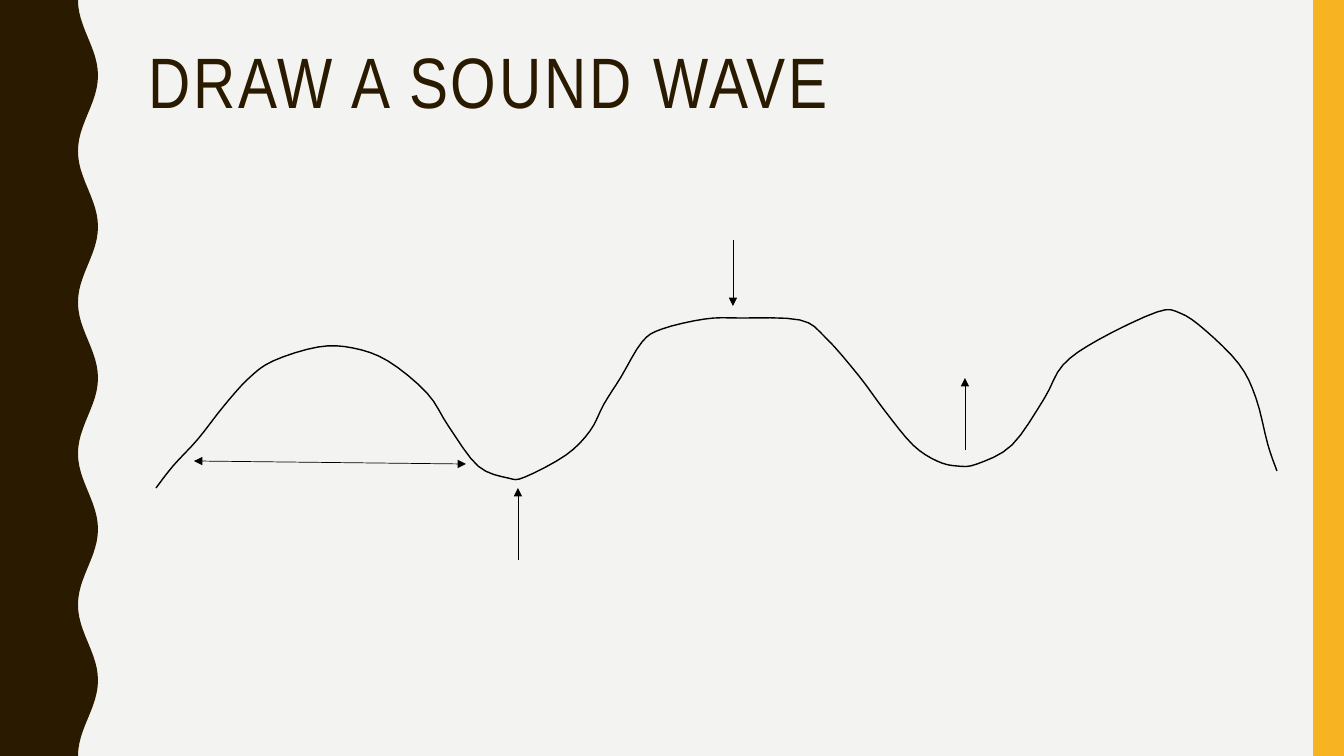
import math
import pptx
import pptx.util
import pptx.dml.color
import pptx.enum.shapes
import pptx.enum.text
import pptx.oxml
import pptx.oxml.ns

COLORS = {"background": "F3F3F2", "brown": "2A1A00", "gold": "F8B323", "ink": "000000"}
FONT = "Arial Narrow"
TITLE = "DRAW A SOUND WAVE"
TITLE_BOX = (138, 42, 1122, 164)
WIDTH, HEIGHT = 1344, 756
GOLD_BAR = (1313, 0, 31, HEIGHT)
RIPPLES, RIPPLE_STEPS = 5, 24
RIPPLE_MIDDLE, RIPPLE_DEPTH = 88, 10
SOUND_WAVE = [
    (156, 488), (173, 466), (198, 439), (223, 407), (248, 379), (273, 361),
    (318, 347), (353, 348), (388, 361), (427, 393), (449, 427), (478, 466),
    (508, 478), (525, 477), (566, 455), (590, 431), (604, 404), (621, 377),
    (642, 342), (662, 329), (705, 319), (740, 318), (800, 320), (826, 338),
    (859, 376), (885, 411), (913, 445), (937, 461), (957, 466), (977, 464),
    (1012, 445), (1044, 399), (1063, 365), (1098, 340), (1157, 312),
    (1180, 313), (1205, 330), (1239, 364), (1256, 398), (1268, 445), (1277, 471),
]
CURVE_STEPS = 4
ARROWS = [
    ((518, 560), (518, 488), ["tailEnd"]),
    ((965, 450), (965, 378), ["tailEnd"]),
    ((733, 240), (733, 306), ["tailEnd"]),
    ((194, 461), (466, 464), ["headEnd", "tailEnd"]),
]


def px(n):
    return pptx.util.Emu(round(n * 914400 / 100.8))


def color(name):
    return pptx.dml.color.RGBColor.from_string(COLORS[name])


def fill_plain(sp, name):
    sp.shadow.inherit = False
    sp.fill.solid()
    sp.fill.fore_color.rgb = color(name)
    sp.line.fill.background()


def outline(s, points, close):
    points = [(px(x), px(y)) for x, y in points]
    builder = s.shapes.build_freeform(*points[0], scale=1.0)
    builder.add_line_segments(points[1:], close=close)
    return builder.convert_to_shape()


def blend(a, b, c, d, t):
    return b + t / 2 * (c - a + t * (2 * a - 5 * b + 4 * c - d + t * (3 * (b - c) + d - a)))


def smooth_curve(points):
    ends = points[:1] + points + points[-1:]
    curve = []
    for group in zip(ends, ends[1:], ends[2:], ends[3:]):
        xs, ys = zip(*group)
        for i in range(CURVE_STEPS):
            t = i / CURVE_STEPS
            curve.append((blend(*xs, t), blend(*ys, t)))
    return curve + points[-1:]


def add_edge(s):
    steps = RIPPLES * RIPPLE_STEPS
    edge = [(RIPPLE_MIDDLE - RIPPLE_DEPTH * math.cos(math.tau * i / RIPPLE_STEPS),
             HEIGHT * i / steps) for i in range(steps + 1)]
    fill_plain(outline(s, [(0, 0)] + edge + [(0, HEIGHT)], True), "brown")


def add_wave(s):
    sp = outline(s, smooth_curve(SOUND_WAVE), False)
    sp.shadow.inherit = False
    sp.fill.background()
    sp.line.color.rgb = color("ink")
    sp.line.width = pptx.util.Pt(1)


def add_arrow(s, start, end, heads):
    line = s.shapes.add_connector(
        pptx.enum.shapes.MSO_CONNECTOR.STRAIGHT, *map(px, start + end))
    line.line.color.rgb = color("ink")
    line.line.width = pptx.util.Pt(0.5)
    spPr = line._element.spPr
    ln = spPr.find(pptx.oxml.ns.qn("a:ln"))
    for head in heads:
        ln.append(pptx.oxml.parse_xml(
            f'<a:{head} {pptx.oxml.ns.nsdecls("a")} type="triangle"/>'))
    spPr.append(pptx.oxml.parse_xml(
        f'<a:effectLst {pptx.oxml.ns.nsdecls("a")}/>'))


def set_title(s):
    sp = s.shapes.title
    sp.left, sp.top, sp.width, sp.height = map(px, TITLE_BOX)
    tf = sp.text_frame
    tf.word_wrap = True
    tf.auto_size = pptx.enum.text.MSO_AUTO_SIZE.NONE
    tf.vertical_anchor = pptx.enum.text.MSO_ANCHOR.TOP
    p = tf.paragraphs[0]
    p.alignment = pptx.enum.text.PP_ALIGN.LEFT
    p.line_spacing = 0.9
    r = p.add_run()
    r.text = TITLE
    r.font.name = FONT
    r.font.size = pptx.util.Pt(51)
    r.font.color.rgb = color("brown")
    r._r.get_or_add_rPr().set("spc", "200")


def main():
    prs = pptx.Presentation()
    prs.slide_width, prs.slide_height = px(WIDTH), px(HEIGHT)
    s = prs.slides.add_slide(prs.slide_layouts[5])
    s.background.fill.solid()
    s.background.fill.fore_color.rgb = color("background")
    set_title(s)
    add_edge(s)
    bar = s.shapes.add_shape(
        pptx.enum.shapes.MSO_SHAPE.RECTANGLE, *map(px, GOLD_BAR))
    fill_plain(bar, "gold")
    add_wave(s)
    for start, end, heads in ARROWS:
        add_arrow(s, start, end, heads)
    prs.save("out.pptx")


if __name__ == "__main__":
    main()
